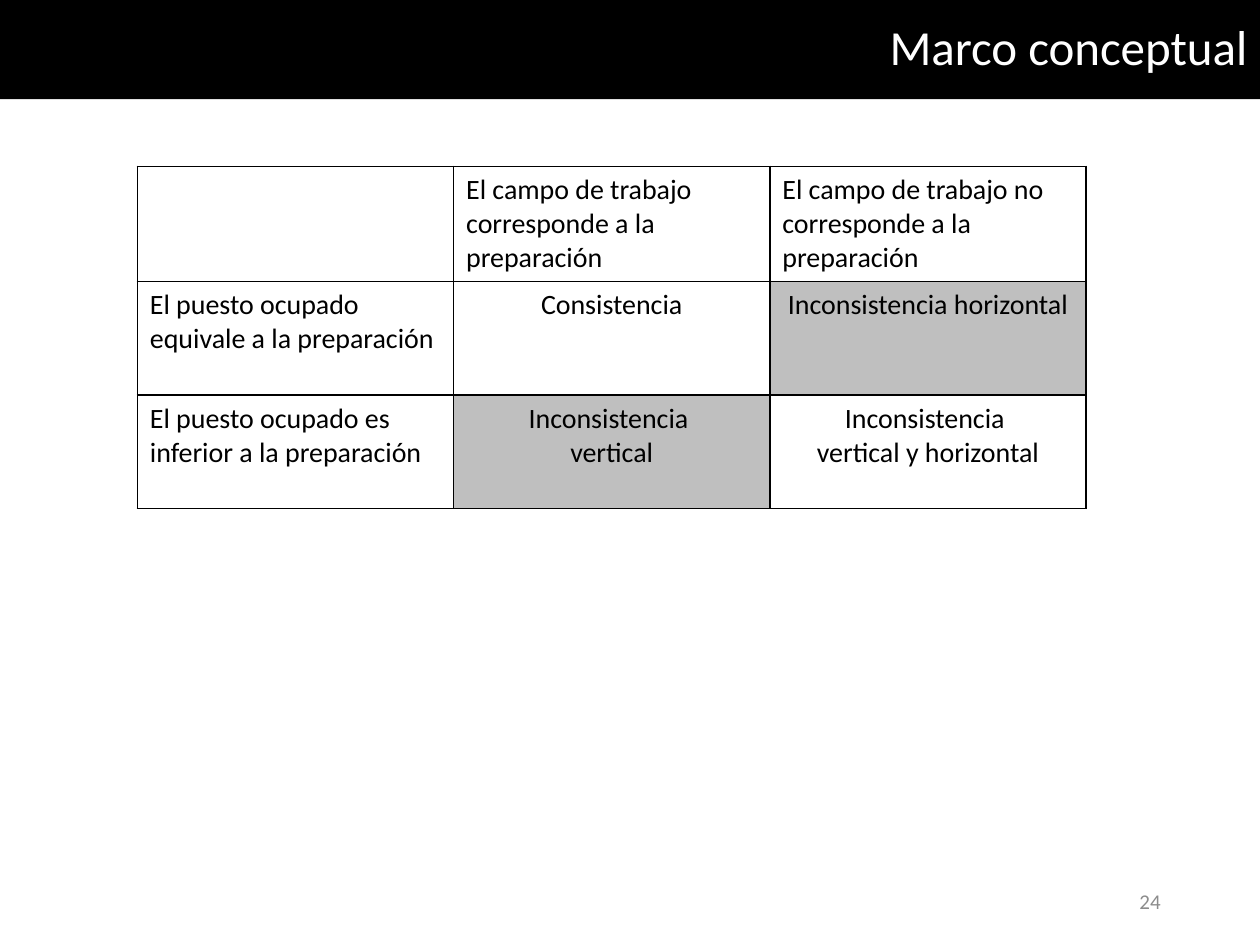
from lxml import etree
from pptx import Presentation
from pptx.dml.color import RGBColor
from pptx.enum.text import MSO_ANCHOR, PP_ALIGN
from pptx.oxml.ns import qn
from pptx.util import Inches, Pt

LEFT, CENTER, RIGHT = PP_ALIGN.LEFT, PP_ALIGN.CENTER, PP_ALIGN.RIGHT
TOP, MIDDLE = MSO_ANCHOR.TOP, MSO_ANCHOR.MIDDLE
WIDTH, HEIGHT = 10, 7.5
FONT = "Calibri"
BLACK, WHITE, SHADE, MUTED = "000000", "FFFFFF", "BFBFBF", "8C8C8C"
TITLE_ONLY = 5

# Each cell is a list of paragraphs
MATRIX = [
    [[],
     ["El campo de trabajo corresponde a la preparación"],
     ["El campo de trabajo no corresponde a la preparación"]],
    [["El puesto ocupado equivale a la preparación"],
     ["Consistencia"],
     ["Inconsistencia horizontal"]],
    [["El puesto ocupado es inferior a la preparación"],
     ["Inconsistencia ", "vertical"],
     ["Inconsistencia ", "vertical y horizontal"]],
]
SHADED = {(1, 2), (2, 1)}


def color(hex_value):
    return RGBColor.from_string(hex_value)


def fill_with(item, hex_value):
    item.fill.solid()
    item.fill.fore_color.rgb = color(hex_value)


def write(frame, lines, size, hex_value, align):
    frame.word_wrap = True
    for index, line in enumerate(lines):
        paragraph = frame.add_paragraph() if index else frame.paragraphs[0]
        paragraph.alignment = align
        run = paragraph.add_run()
        run.text = line
        run.font.size = Pt(size)
        run.font.name = FONT
        run.font.color.rgb = color(hex_value)


def border(cell, hex_value, points):
    properties = cell._tc.get_or_add_tcPr()
    for index, side in enumerate(("lnL", "lnR", "lnT", "lnB")):
        line = etree.Element(qn(f"a:{side}"), w=str(Pt(points)))
        solid = etree.SubElement(line, qn("a:solidFill"))
        etree.SubElement(solid, qn("a:srgbClr"), val=hex_value)
        properties.insert(index, line)


def title_band(slide, box, text):
    band = slide.shapes.title
    band.left, band.top, band.width, band.height = map(Inches, box)
    fill_with(band, BLACK)
    frame = band.text_frame
    frame.vertical_anchor = MIDDLE
    write(frame, [text], 28, WHITE, RIGHT)
    frame.paragraphs[0].line_spacing = 0.9


def consistency_matrix(slide, box, rows):
    table = slide.shapes.add_table(len(rows), len(rows[0]), *map(Inches, box)).table
    table.first_row = table.horz_banding = False
    for r, row in enumerate(rows):
        for c, lines in enumerate(row):
            cell = table.cell(r, c)
            cell.vertical_anchor = TOP
            fill_with(cell, SHADE if (r, c) in SHADED else WHITE)
            border(cell, BLACK, 1)
            write(cell.text_frame, lines, 16, BLACK, CENTER if r and c else LEFT)


def page_number(slide, box, text):
    frame = slide.shapes.add_textbox(*map(Inches, box)).text_frame
    frame.vertical_anchor = MIDDLE
    write(frame, [text], 12, MUTED, RIGHT)


def main():
    deck = Presentation()
    deck.slide_width, deck.slide_height = Inches(WIDTH), Inches(HEIGHT)
    slide = deck.slides.add_slide(deck.slide_layouts[TITLE_ONLY])
    title_band(slide, (0, 0, WIDTH, 0.105 * HEIGHT), "Marco conceptual")
    consistency_matrix(
        slide, (0.109 * WIDTH, 0.176 * HEIGHT, 0.753 * WIDTH, 0.36 * HEIGHT), MATRIX)
    page_number(
        slide, (0.706 * WIDTH, 0.927 * HEIGHT, 0.225 * WIDTH, 0.053 * HEIGHT), "24")
    deck.save("out.pptx")


if __name__ == "__main__":
    main()
